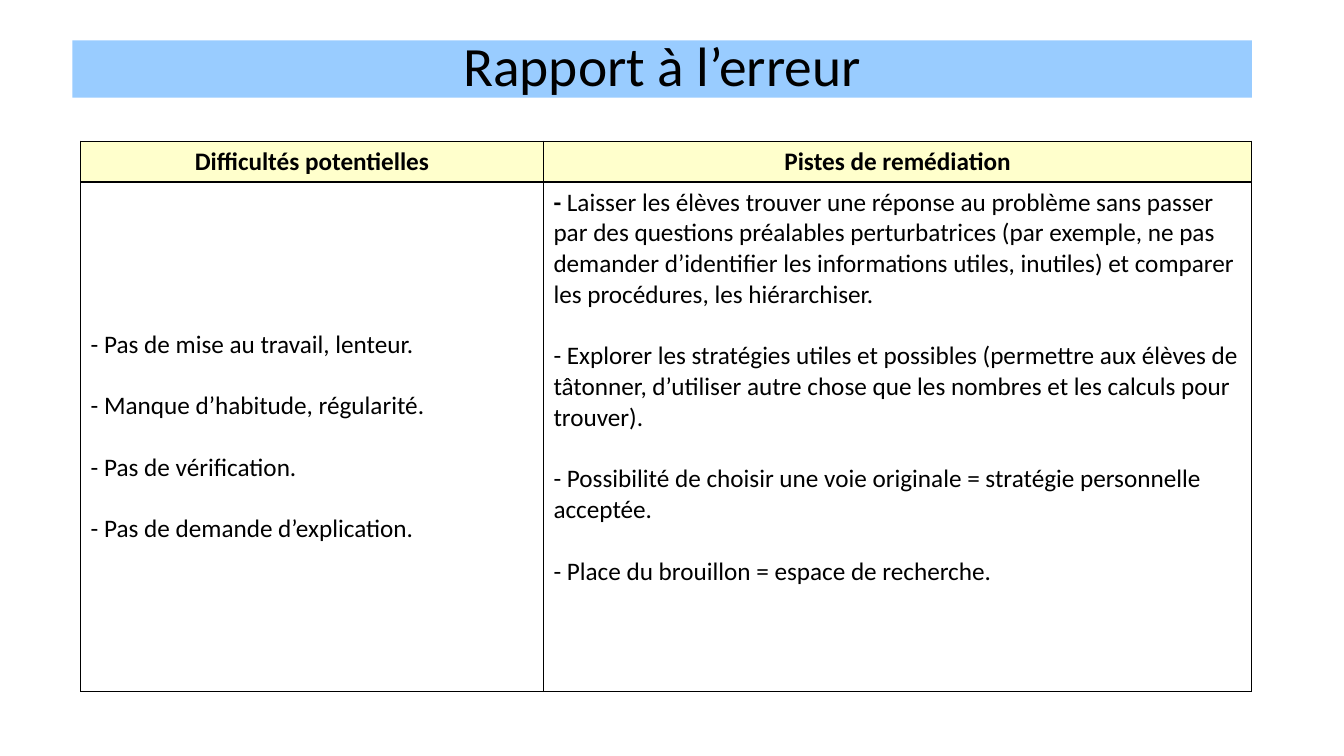
from pptx import Presentation
from pptx.dml.color import RGBColor
from pptx.enum import shapes, text
from pptx.oxml import parse_xml
from pptx.oxml.ns import nsdecls
from pptx.util import Pt

TITLE = "Rapport à l’erreur"
HEADERS = ["Difficultés potentielles", "Pistes de remédiation"]
DIFFICULTIES = [
    "Pas de mise au travail, lenteur.",
    "Manque d’habitude, régularité.",
    "Pas de vérification.",
    "Pas de demande d’explication.",
]
REMEDIES = [
    "Laisser les élèves trouver une réponse au problème sans passer par des "
    "questions préalables perturbatrices (par exemple, ne pas demander "
    "d’identifier les informations utiles, inutiles) et comparer les "
    "procédures, les hiérarchiser.",
    "Explorer les stratégies utiles et possibles (permettre aux élèves de "
    "tâtonner, d’utiliser autre chose que les nombres et les calculs pour "
    "trouver).",
    "Possibilité de choisir une voie originale = stratégie personnelle "
    "acceptée.",
    "Place du brouillon = espace de recherche.",
]
COLORS = {"title": "99CCFF", "header": "FFFFCC", "body": "FFFFFF", "ink": "000000"}
FONT = "Calibri"
COL_WIDTHS = [330.6, 506]
ROW_HEIGHTS = [29.2, 364.2]
ITEM_GAP = 22  # one line of 18 pt text


def rgb(name):
    return RGBColor.from_string(COLORS[name])


def set_font(p, size, bold=False):
    p.font.name, p.font.size, p.font.bold = FONT, Pt(size), bold
    p.font.color.rgb = rgb("ink")


def style_cell(cell, fill, anchor):
    """Give the cell thin borders on all sides, a fill and an anchor."""
    tc_pr = cell._tc.get_or_add_tcPr()
    for side in "LRTB":
        tc_pr.append(parse_xml(
            f'<a:ln{side} {nsdecls("a")} w="{Pt(1)}"><a:solidFill>'
            f'<a:srgbClr val="{COLORS["ink"]}"/></a:solidFill></a:ln{side}>'))
    cell.fill.solid()
    cell.fill.fore_color.rgb = rgb(fill)
    cell.vertical_anchor = anchor


def add_title(s):
    sp = s.shapes.add_shape(shapes.MSO_SHAPE.RECTANGLE,
                            Pt(51.8), Pt(28.8), Pt(842.4), Pt(41))
    sp.shadow.inherit = False
    sp.fill.solid()
    sp.fill.fore_color.rgb = rgb("title")
    sp.line.fill.background()
    tf = sp.text_frame
    tf.margin_top = tf.margin_bottom = 0
    tf.vertical_anchor = text.MSO_ANCHOR.MIDDLE
    p = tf.paragraphs[0]
    p.text = TITLE
    p.alignment = text.PP_ALIGN.CENTER
    p.line_spacing = 0.9
    set_font(p, 39.6)


def add_items(tf, items, bold_first_dash):
    for i, item in enumerate(items):
        p = tf.add_paragraph() if i else tf.paragraphs[0]
        dash = p.add_run()
        dash.text = "- "
        if bold_first_dash and i == 0:
            dash.font.bold = True
        p.add_run().text = item
        p.space_before = Pt(ITEM_GAP if i else 0)
        set_font(p, 18)


def add_comparison(s):
    table = s.shapes.add_table(2, 2, Pt(57.6), Pt(100.8), Pt(sum(COL_WIDTHS)),
                               Pt(sum(ROW_HEIGHTS))).table
    for row, height in zip(table.rows, ROW_HEIGHTS):
        row.height = Pt(height)
    middle, top = text.MSO_ANCHOR.MIDDLE, text.MSO_ANCHOR.TOP
    columns = zip(COL_WIDTHS, HEADERS, [DIFFICULTIES, REMEDIES], [middle, top])
    for c, (width, header, items, anchor) in enumerate(columns):
        table.columns[c].width = Pt(width)
        head, body = table.cell(0, c), table.cell(1, c)
        style_cell(head, "header", middle)
        style_cell(body, "body", anchor)
        p = head.text_frame.paragraphs[0]
        p.text = header
        p.alignment = text.PP_ALIGN.CENTER
        set_font(p, 18, bold=True)
        add_items(body.text_frame, items, bold_first_dash=items is REMEDIES)


def main():
    prs = Presentation()
    prs.slide_width, prs.slide_height = Pt(960), Pt(540)
    s = prs.slides.add_slide(prs.slide_layouts[6])
    add_title(s)
    add_comparison(s)
    prs.save("out.pptx")


if __name__ == "__main__":
    main()
